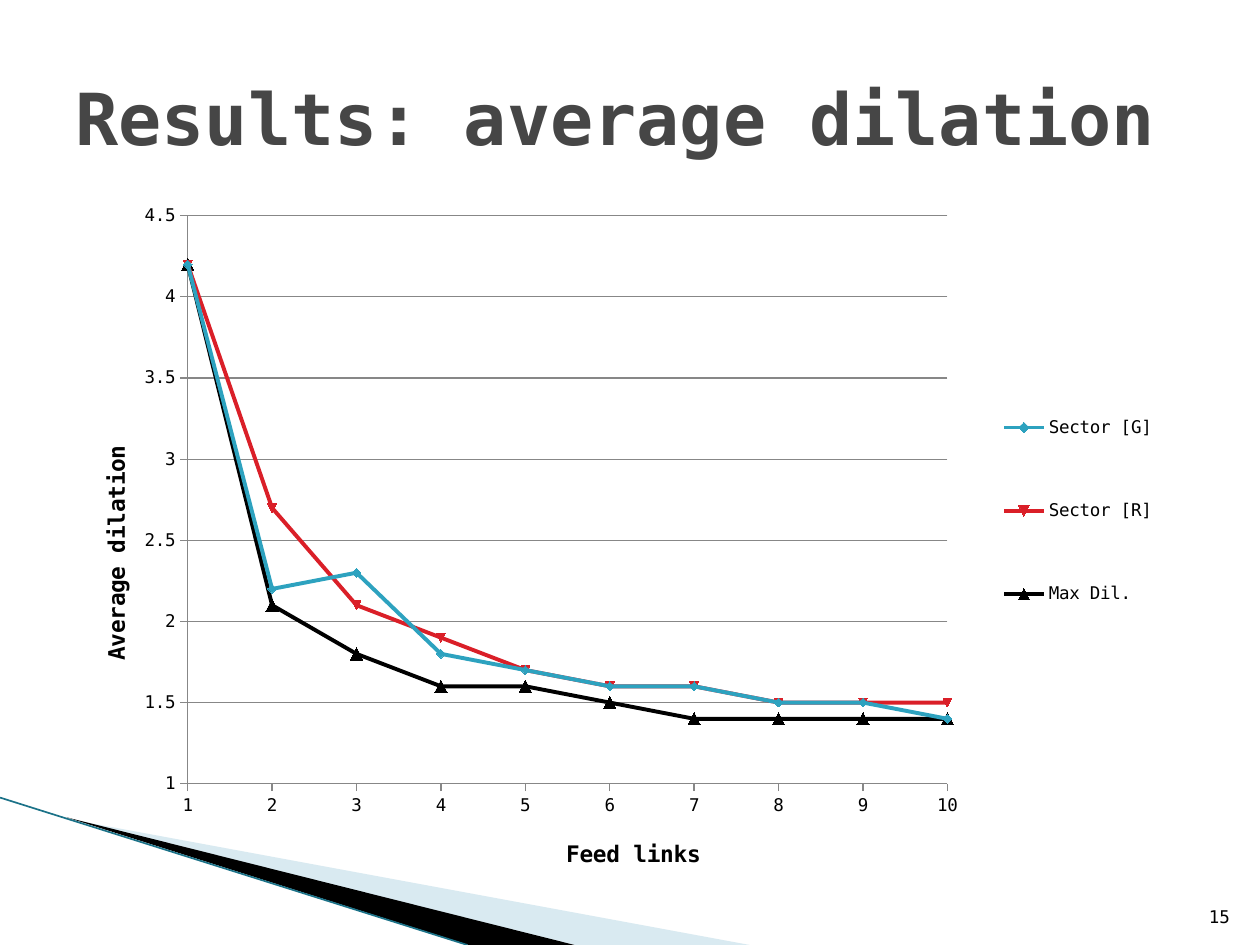
import dataclasses
import typing

import lxml.etree
import pptx
import pptx.chart.data
import pptx.dml.color
import pptx.enum.chart
import pptx.enum.text
import pptx.oxml
import pptx.oxml.ns
import pptx.util

FONT = "DejaVu Sans Mono"
WIDTH, HEIGHT = pptx.util.Inches(10), pptx.util.Inches(7.5)
GREY = "878787"
Point = typing.Tuple[float, float]
Box = typing.Tuple[float, float, float, float]
qn = pptx.oxml.ns.qn


# Places on the slide are percentages of its width and height.
@dataclasses.dataclass
class Wedge:
    points: typing.List[Point]
    color: str
    alpha: int = 100


@dataclasses.dataclass
class Label:
    text: str
    box: Box
    anchor: typing.Any
    align: typing.Any
    font: dict


@dataclasses.dataclass
class Series:
    name: str
    color: str
    values: typing.List[float]
    marker: typing.Any = None
    marker_size: int = 5


WEDGES = [
    Wedge([(5.5, 86.7), (59.5, 100), (45.6, 100)], "A0CBDC", 40),
    Wedge([(5.3, 86.5), (45.6, 100), (37.2, 100)], "000000"),
]
LABELS = [
    Label("15", (94.6, 93.47, 4, 5.33), pptx.enum.text.MSO_ANCHOR.BOTTOM,
          pptx.enum.text.PP_ALIGN.RIGHT, {"size": 10, "color": "000000"}),
    Label("Results: average dilation", (5, 4, 90, 16.67),
          pptx.enum.text.MSO_ANCHOR.MIDDLE, pptx.enum.text.PP_ALIGN.LEFT,
          {"size": 41, "color": "464646", "bold": True}),
]
SERIES = [
    Series("Sector [G]", "2DA2BF",
           [4.2, 2.2, 2.3, 1.8, 1.7, 1.6, 1.6, 1.5, 1.5, 1.4]),
    Series("Sector [R]", "DA1F28",
           [4.2, 2.7, 2.1, 1.9, 1.7, 1.6, 1.6, 1.5, 1.5, 1.5]),
    Series("Max Dil.", "000000",
           [4.2, 2.1, 1.8, 1.6, 1.6, 1.5, 1.4, 1.4, 1.4, 1.4],
           pptx.enum.chart.XL_MARKER_STYLE.TRIANGLE, 7),
]


def rgb(color: str):
    return pptx.dml.color.RGBColor.from_string(color)


def place(x: float, y: float) -> typing.Tuple[int, int]:
    return round(WIDTH * x / 100), round(HEIGHT * y / 100)


def set_font(font, size: float, color: str = "000000", bold: bool = False) -> None:
    values = {"name": FONT, "size": pptx.util.Pt(size), "bold": bold}
    for name, value in values.items():
        setattr(font, name, value)
    font.color.rgb = rgb(color)


def set_line(line, color: str, width: float) -> None:
    line.color.rgb = rgb(color)
    line.width = pptx.util.Pt(width)


def add_wedge(s, wedge: Wedge) -> None:
    start, *rest = [place(*point) for point in wedge.points]
    builder = s.shapes.build_freeform(*start)
    builder.add_line_segments(rest, close=True)
    sp = builder.convert_to_shape()
    sp.shadow.inherit = False
    sp.line.fill.background()
    sp.fill.solid()
    sp.fill.fore_color.rgb = rgb(wedge.color)
    if wedge.alpha < 100:
        clr = sp.fill._xPr.find(".//" + qn("a:srgbClr"))
        lxml.etree.SubElement(clr, qn("a:alpha"), val=str(wedge.alpha * 1000))


def add_edge(s, start: Point, end: Point, color: str) -> None:
    sp = s.shapes.add_connector(
        pptx.enum.shapes.MSO_CONNECTOR.STRAIGHT, *place(*start), *place(*end))
    set_line(sp.line, color, 0.95)
    lxml.etree.SubElement(sp._element.spPr, qn("a:effectLst"))


def add_label(s, label: Label) -> None:
    left, top, width, height = label.box
    sp = s.shapes.add_textbox(*place(left, top), *place(width, height))
    tf = sp.text_frame
    tf.word_wrap = True
    tf.vertical_anchor = label.anchor
    p = tf.paragraphs[0]
    p.alignment = label.align
    r = p.add_run()
    r.text = label.text
    set_font(r.font, **label.font)


def set_layout(parent, index: int, inner: bool = False, **shares: float) -> None:
    """Put a manual layout, in shares of the chart, at a child index."""
    for old in parent.findall(qn("c:layout")):
        parent.remove(old)
    layout = pptx.oxml.parse_xml(
        "<c:layout %s><c:manualLayout/></c:layout>" % pptx.oxml.ns.nsdecls("c"))
    settings = {"layoutTarget": "inner"} if inner else {}
    settings.update(xMode="edge", yMode="edge", **shares)
    for tag, value in settings.items():
        lxml.etree.SubElement(layout[0], qn("c:" + tag), val=str(value))
    parent.insert(index, layout)


def format_axis(axis, title: str, at: Point, grid: bool, scale: dict) -> None:
    values = dict(scale, has_major_gridlines=grid, has_title=True,
                  major_tick_mark=pptx.enum.chart.XL_TICK_MARK.OUTSIDE,
                  minor_tick_mark=pptx.enum.chart.XL_TICK_MARK.NONE)
    for name, value in values.items():
        setattr(axis, name, value)
    axis.tick_labels.number_format = "General"
    axis.tick_labels.number_format_is_linked = False
    set_font(axis.tick_labels.font, 10)
    set_line(axis.format.line, GREY, 0.75)
    if grid:
        set_line(axis.major_gridlines.format.line, GREY, 0.75)
    r = axis.axis_title.text_frame.paragraphs[0].add_run()
    r.text = title
    set_font(r.font, 13, bold=True)
    set_layout(axis.axis_title._element, 1, x=at[0], y=at[1])


def add_dilation_chart(s) -> None:
    data = pptx.chart.data.XyChartData()
    for series in SERIES:
        xy = data.add_series(series.name)
        for links, dilation in enumerate(series.values, 1):
            xy.add_data_point(links, dilation)
    chart = s.shapes.add_chart(
        pptx.enum.chart.XL_CHART_TYPE.XY_SCATTER_LINES,
        *place(5, 16.67), *place(90, 77.07), data).chart
    chart.has_title = False
    set_font(chart.font, 10)
    chart.plots[0].vary_by_categories = False

    # Lines and markers
    for series, xy in zip(SERIES, chart.plots[0].series):
        xy.smooth = False
        set_line(xy.format.line, series.color, 2.25)
        if series.marker is not None:
            xy.marker.style = series.marker
        xy.marker.size = series.marker_size
        xy.marker.format.fill.solid()
        xy.marker.format.fill.fore_color.rgb = rgb(series.color)
        set_line(xy.marker.format.line, series.color, 0.75)

    # Axes, legend and plot area
    format_axis(chart.category_axis, "Feed links", (0.44, 0.93), False,
                {"minimum_scale": 1, "maximum_scale": 10, "major_unit": 1})
    format_axis(chart.value_axis, "Average dilation", (0.03, 0.39), True,
                {"minimum_scale": 1, "maximum_scale": 4.5, "major_unit": 0.5})
    chart.has_legend = True
    chart.legend.position = pptx.enum.chart.XL_LEGEND_POSITION.RIGHT
    chart.legend.include_in_layout = False
    set_font(chart.legend.font, 10)
    set_layout(chart.legend._element, 1, x=0.8, y=0.27, w=0.19, h=0.43)
    plot_area = chart._chartSpace.chart.plotArea
    set_layout(plot_area, 0, inner=True, x=0.11, y=0.08, w=0.67, h=0.78)


def main() -> None:
    prs = pptx.Presentation()
    prs.slide_width, prs.slide_height = WIDTH, HEIGHT
    s = prs.slides.add_slide(prs.slide_layouts[6])
    # Corner decoration
    for wedge in WEDGES:
        add_wedge(s, wedge)
    add_edge(s, (0, 84.4), (37.1, 100), "1B7288")
    # Title, page number and chart
    for label in LABELS:
        add_label(s, label)
    add_dilation_chart(s)
    prs.save("out.pptx")


if __name__ == "__main__":
    main()
